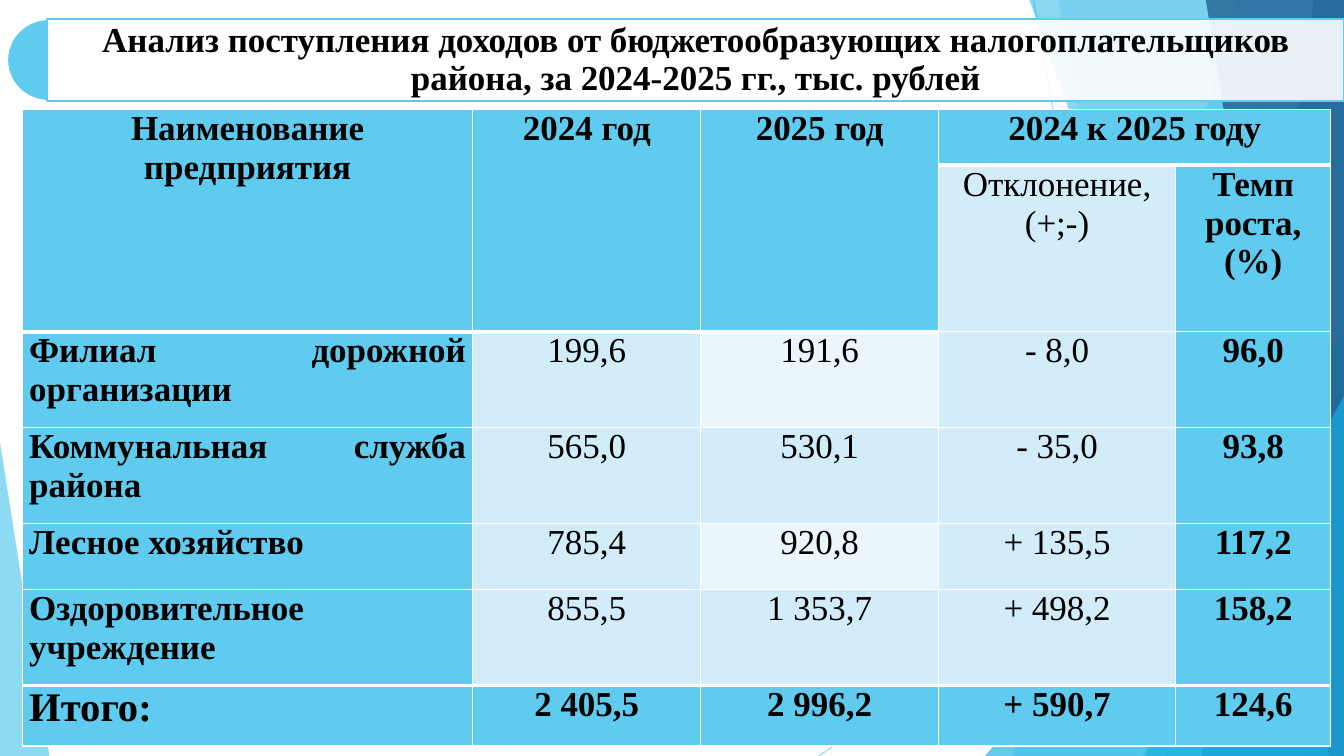
import pptx
import pptx.dml.color
import pptx.enum.dml
import pptx.enum.shapes
import pptx.enum.text
import pptx.oxml
import pptx.oxml.ns
import pptx.util
from lxml import etree

Inches = pptx.util.Inches
Pt = pptx.util.Pt
SHAPES = pptx.enum.shapes.MSO_SHAPE
ALIGN = pptx.enum.text.PP_ALIGN
ANCHOR = pptx.enum.text.MSO_ANCHOR
qn = pptx.oxml.ns.qn

COLORS = {
    "white": "FFFFFF",
    "black": "000000",
    "sky": "5FCBEF",
    "cyan": "17B0E4",
    "blue": "2E83C3",
    "navy": "226292",
    "pale": "D2ECF9",
    "paler": "EAF6FC",
}
WIDTH, HEIGHT = 13.33, 7.5
RAYS = [((10.25, 0), (11.58, HEIGHT)), ((WIDTH, 4.03), (8.12, HEIGHT))]
FACETS = [
    (12.28, 10.04, "sky", 36),
    (10.5, 11.83, "sky", 20),
    (10.21, 12.91, "cyan", 50),
    (13.03, 11.92, "blue", 70),
    (11.96, 13.18, "navy", 80),
]
TRIANGLES = [
    (9.77, 3.33, 3.56, 4.17, 1, "cyan", 66),
    (11.34, 3.93, 1.99, 3.57, 1, "cyan", 66),
    (0, 4.39, 0.49, 3.11, 0, "sky", 70),
]
TITLE = ("Анализ поступления доходов от бюджетообразующих налогоплательщиков "
         "района, за 2024-2025 гг., тыс. рублей")
COLUMNS = [4.47, 2.26, 2.36, 2.35, 1.54]
ROWS = [0.55, 1.65, 0.95, 0.95, 0.66, 0.95, 0.6]
CELLS = [
    ["Наименование предприятия", "2024 год", "2025 год", "2024 к 2025 году", ""],
    ["", "", "", "Отклонение, (+;-)", "Темп роста, (%)"],
    ["Филиал дорожной организации", "199,6", "191,6", "- 8,0", "96,0"],
    ["Коммунальная служба района", "565,0", "530,1", "- 35,0", "93,8"],
    ["Лесное хозяйство", "785,4", "920,8", "+ 135,5", "117,2"],
    ["Оздоровительное учреждение", "855,5", "1 353,7", "+ 498,2", "158,2"],
    ["Итого:", "2 405,5", "2 996,2", "+ 590,7", "124,6"],
]
TOTAL = len(ROWS) - 1
MERGES = [((0, 0), (1, 0)), ((0, 1), (1, 1)), ((0, 2), (1, 2)), ((0, 3), (0, 4))]
FONT = {"name": "Times New Roman", "size": Pt(25), "bold": True}
CELL_FORMAT = {"margin_left": Inches(0.07), "margin_right": Inches(0.07),
               "margin_top": 0, "margin_bottom": 0, "vertical_anchor": ANCHOR.TOP}
TITLE_FORMAT = {"margin_left": Inches(0.1), "margin_right": Inches(0.1),
                "margin_top": Inches(0.1), "margin_bottom": Inches(0.1),
                "vertical_anchor": ANCHOR.MIDDLE, "word_wrap": True}


def rgb(name):
    return pptx.dml.color.RGBColor.from_string(COLORS[name])


def apply(target, values):
    for name, value in values.items():
        setattr(target, name, value)


def set_opacity(shape, percent):
    color = next(shape.element.spPr.iter(qn("a:srgbClr")))
    etree.SubElement(color, qn("a:alpha")).set("val", str(percent * 1000))


def paint(shape, fill, opacity=100, line=None):
    shape.shadow.inherit = False
    shape.fill.solid()
    shape.fill.fore_color.rgb = rgb(fill)
    if opacity < 100:
        set_opacity(shape, opacity)
    if line:
        shape.line.color.rgb = rgb(line)
        shape.line.width = Pt(1.5)
    else:
        shape.line.fill.background()


def write(frame, text, align, **changes):
    para = frame.paragraphs[0]
    para.alignment = align
    span = para.add_run()
    span.text = text
    apply(span.font, FONT | changes)
    span.font.color.rgb = rgb("black")
    return para


def add_shape(page, kind, left, top, width, height):
    return page.shapes.add_shape(kind, Inches(left), Inches(top), Inches(width), Inches(height))


def add_ray(page, start, end):
    ray = page.shapes.add_connector(
        pptx.enum.shapes.MSO_CONNECTOR.STRAIGHT, *map(Inches, start + end))
    ray.line.color.rgb = rgb("sky")
    ray.line.width = Pt(0.75)
    set_opacity(ray, 70)
    etree.SubElement(ray.element.spPr, qn("a:effectLst"))


def add_facet(page, top_x, bottom_x, color, opacity):
    builder = page.shapes.build_freeform(Inches(top_x), 0)
    corners = [(WIDTH, 0), (WIDTH, HEIGHT), (bottom_x, HEIGHT)]
    builder.add_line_segments([(Inches(x), Inches(y)) for x, y in corners], close=True)
    paint(builder.convert_to_shape(), color, opacity)


def add_triangle(page, left, top, width, height, apex, color, opacity):
    triangle = add_shape(page, SHAPES.ISOSCELES_TRIANGLE, left, top, width, height)
    triangle.adjustments[0] = apex
    paint(triangle, color, opacity)


def add_title(page):
    pie = add_shape(page, SHAPES.PIE, 0.07, 0.19, 0.81, 0.81)
    pie.adjustments[0] = 54
    pie.adjustments[1] = 162
    paint(pie, "sky", line="white")
    box = add_shape(page, SHAPES.RECTANGLE, 0.47, 0.19, 12.86, 0.81)
    paint(box, "white", 90, "sky")
    apply(box.text_frame, TITLE_FORMAT)
    write(box.text_frame, TITLE, ALIGN.CENTER).line_spacing = 0.9


def thick_below(row, column):
    return row in (0, TOTAL - 1) or (row == 1 and column < 3)


def set_borders(cell, row, column):
    properties = cell._tc.get_or_add_tcPr()
    widths = {"L": 1, "R": 1,
              "T": 3 if thick_below(row - 1, column) else 1,
              "B": 3 if thick_below(row, column) else 1}
    for side, width in widths.items():
        border = etree.SubElement(properties, qn("a:ln" + side), w=str(Pt(width)))
        fill = etree.SubElement(border, qn("a:solidFill"))
        etree.SubElement(fill, qn("a:srgbClr"), val=COLORS["white"])


def is_strong(row, column):
    return row in (0, TOTAL) or column in (0, 4)


def cell_color(row, column):
    if is_strong(row, column) or (row == 1 and column < 3):
        return "sky"
    return "paler" if column == 2 and row % 2 == 0 else "pale"


def add_income_table(page):
    table = page.shapes.add_table(
        len(ROWS), len(COLUMNS), Inches(0.22), Inches(1.09),
        Inches(sum(COLUMNS)), Inches(sum(ROWS))).table
    apply(table, {"first_row": False, "horz_banding": False})
    for column, width in zip(table.columns, COLUMNS):
        column.width = Inches(width)
    for row, height in zip(table.rows, ROWS):
        row.height = Inches(height)
    for first, last in MERGES:
        table.cell(*first).merge(table.cell(*last))
    for row, texts in enumerate(CELLS):
        for column, text in enumerate(texts):
            cell = table.cell(row, column)
            apply(cell, CELL_FORMAT)
            set_borders(cell, row, column)
            cell.fill.solid()
            cell.fill.fore_color.rgb = rgb(cell_color(row, column))
            if text:
                align = ALIGN.JUSTIFY if column == 0 and row > 1 else ALIGN.CENTER
                size = Pt(29) if (row, column) == (TOTAL, 0) else Pt(25)
                write(cell.text_frame, text, align, size=size, bold=is_strong(row, column))


def main():
    deck = pptx.Presentation()
    apply(deck, {"slide_width": Inches(WIDTH), "slide_height": Inches(HEIGHT)})
    page = deck.slides.add_slide(deck.slide_layouts[6])
    for ray in RAYS:
        add_ray(page, *ray)
    for facet in FACETS[:2]:
        add_facet(page, *facet)
    add_triangle(page, *TRIANGLES[0])
    for facet in FACETS[2:]:
        add_facet(page, *facet)
    for triangle in TRIANGLES[1:]:
        add_triangle(page, *triangle)
    add_income_table(page)
    add_title(page)
    deck.save("out.pptx")


if __name__ == "__main__":
    main()
